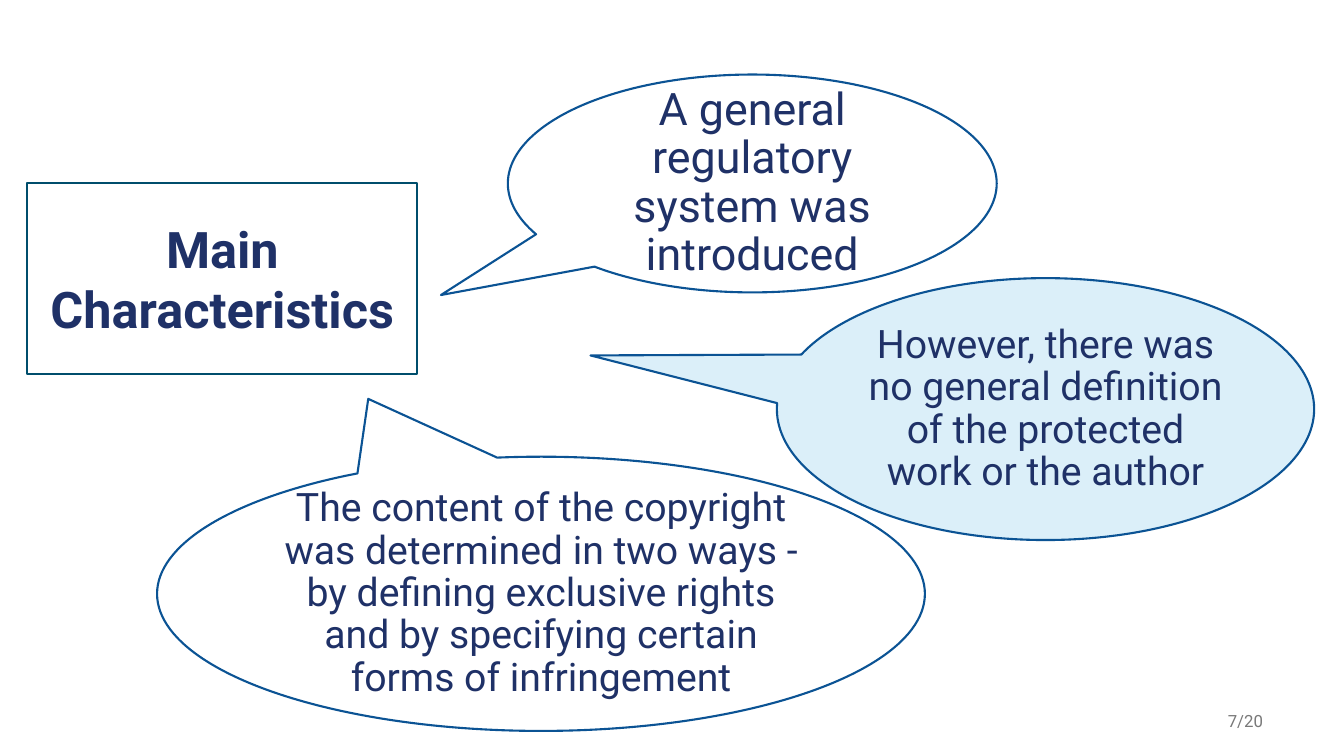
"""Build the slide on the main characteristics of the copyright system."""
import pptx
import pptx.util
import pptx.dml.color
import pptx.enum.shapes
import pptx.enum.text

Cm, Pt = pptx.util.Cm, pptx.util.Pt
SHAPE = pptx.enum.shapes.MSO_SHAPE
ALIGN = pptx.enum.text.PP_ALIGN

SLIDE_SIZE = (33.87, 19.05)
NAVY, BLUE, TEAL, GREY = "1F3167", "0B5394", "004E6C", "797979"
WHITE, PALE_BLUE = "FFFFFF", "DBEFF9"

TOPIC = ("Main Characteristics", (0.69, 4.62, 9.83, 4.8))
REMARKS = [
    ("A general regulatory system was introduced",
     (12.8, 1.88, 12.32, 5.49), (-0.637, 0.512), WHITE, 32),
    ("However, there was no general definition of the protected work or the author",
     (19.58, 7.01, 13.54, 6.6), (-0.847, -0.205), PALE_BLUE, 28),
    ("The content of the copyright was determined in two ways - by defining "
     "exclusive rights and by specifying certain forms of infringement",
     (3.96, 11.51, 19.35, 6.91), (-0.225, -0.711), WHITE, 28),
]
PAGE = ("7/20", (24.46, 17.65, 7.62, 1.02))


def color(hex_code):
    return pptx.dml.color.RGBColor.from_string(hex_code)


def write(holder, text, size, ink=NAVY, bold=False, align=ALIGN.CENTER, spacing=1.0):
    frame = holder.text_frame
    frame.word_wrap = True
    frame.vertical_anchor = pptx.enum.text.MSO_ANCHOR.MIDDLE
    paragraph = frame.paragraphs[0]
    paragraph.text = text
    paragraph.alignment, paragraph.line_spacing = align, spacing
    font = paragraph.runs[0].font
    for name, value in {"name": "Roboto", "size": Pt(size), "bold": bold}.items():
        setattr(font, name, value)
    font.color.rgb = color(ink)


def add_outlined(slide, kind, box, fill, outline):
    shape = slide.shapes.add_shape(kind, *map(Cm, box))
    shape.shadow.inherit = False
    shape.fill.solid()
    shape.fill.fore_color.rgb = color(fill)
    shape.line.color.rgb = color(outline)
    shape.line.width = Pt(1.5)
    return shape


def main():
    deck = pptx.Presentation()
    deck.slide_width, deck.slide_height = map(Cm, SLIDE_SIZE)
    slide = deck.slides.add_slide(deck.slide_layouts[6])

    page_text, page_box = PAGE
    page = slide.shapes.add_textbox(*map(Cm, page_box))
    write(page, page_text, 12, ink=GREY, align=ALIGN.RIGHT)

    topic_text, topic_box = TOPIC
    topic = add_outlined(slide, SHAPE.RECTANGLE, topic_box, WHITE, TEAL)
    write(topic, topic_text, 36, bold=True)

    for text, box, tail, fill, size in REMARKS:
        bubble = add_outlined(slide, SHAPE.OVAL_CALLOUT, box, fill, BLUE)
        for index, offset in enumerate(tail):
            bubble.adjustments[index] = offset
        write(bubble, text, size, spacing=0.9)

    deck.save("out.pptx")


if __name__ == "__main__":
    main()
